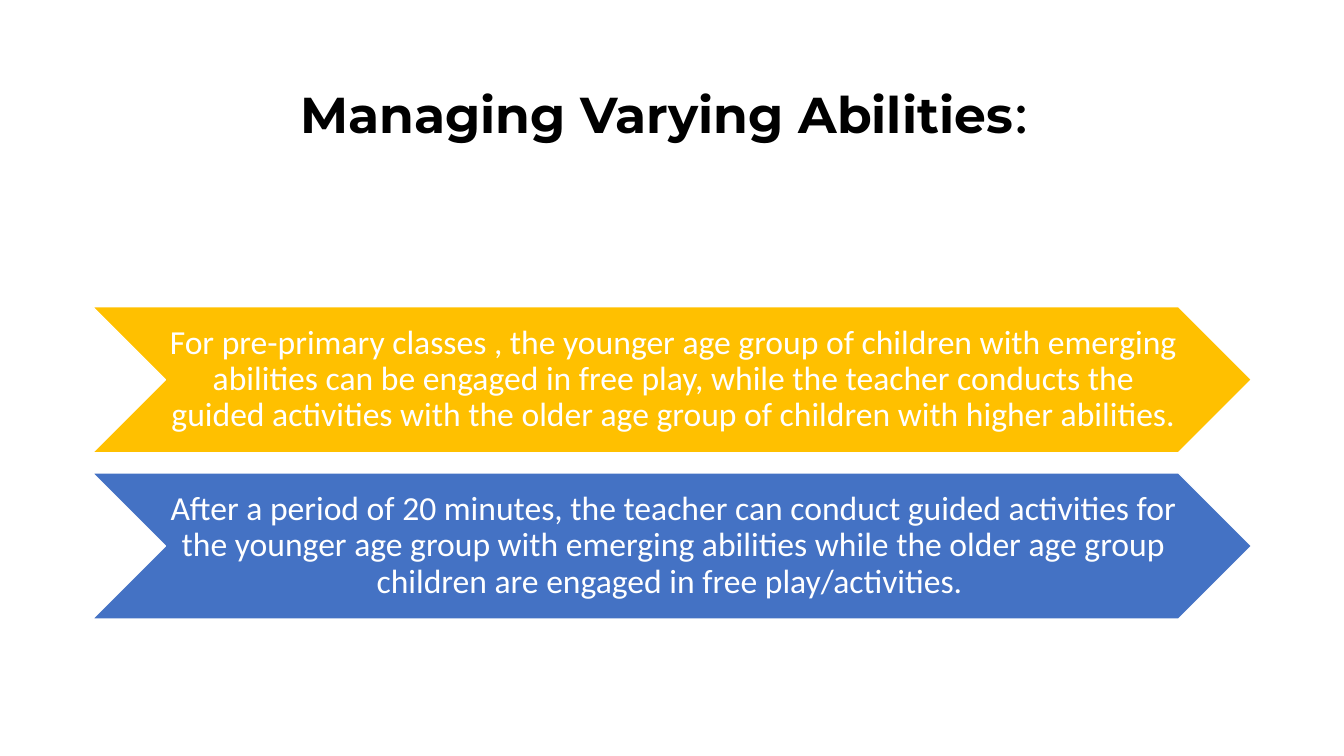
from pptx import Presentation
from pptx.dml.color import RGBColor
from pptx.enum.shapes import MSO_SHAPE
from pptx.enum.text import MSO_ANCHOR, PP_ALIGN
from pptx.util import Pt

CHEVRON = MSO_SHAPE.CHEVRON
CENTER = PP_ALIGN.CENTER
MIDDLE = MSO_ANCHOR.MIDDLE

COLORS = {"black": "000000", "white": "FFFFFF", "gold": "FFC000", "blue": "4472C4"}

TITLE = [
    ("Managing Varying Abilities", {"font": "Montserrat", "size": 36, "bold": True}),
    (": ", {"font": "Calibri", "size": 44}),
]
STEPS = [
    ("gold", "For pre-primary classes , the younger age group of children with emerging "
             "abilities can be engaged in free play, while the teacher conducts the guided "
             "activities with the older age group of children with higher abilities. "),
    ("blue", "After a period of 20 minutes, the teacher can conduct guided activities for the "
             "younger age group with emerging abilities while the older age group children "
             "are engaged in free play/activities. "),
]

LEFT, WIDTH = 66, 828
TITLE_TOP, TITLE_HEIGHT = 28.75, 104.4
STEP_TOP, STEP_HEIGHT, STEP_GAP = 219, 104.4, 14.4


def rgb(name):
    return RGBColor.from_string(COLORS[name])


def add_text(p, text, font="Calibri", size=24, color="black", bold=False):
    p.alignment = CENTER
    p.line_spacing = 0.9
    r = p.add_run()
    r.text = text
    r.font.name = font
    r.font.size = Pt(size)
    r.font.bold = bold
    r.font.color.rgb = rgb(color)


def add_step(s, top, fill, text):
    sp = s.shapes.add_shape(CHEVRON, Pt(LEFT), Pt(top), Pt(WIDTH), Pt(STEP_HEIGHT))
    sp.shadow.inherit = False
    sp.fill.solid()
    sp.fill.fore_color.rgb = rgb(fill)
    sp.line.color.rgb = rgb("white")
    sp.line.width = Pt(1)
    tf = sp.text_frame
    tf.word_wrap = True
    tf.vertical_anchor = MIDDLE
    tf.margin_left, tf.margin_right = Pt(2), Pt(0)
    tf.margin_top = tf.margin_bottom = Pt(1.5)
    add_text(tf.paragraphs[0], text, color="white")


def main():
    prs = Presentation()
    prs.slide_width, prs.slide_height = Pt(960), Pt(540)
    s = prs.slides.add_slide(prs.slide_layouts[5])

    title = s.shapes.title
    title.left, title.top = Pt(LEFT), Pt(TITLE_TOP)
    title.width, title.height = Pt(WIDTH), Pt(TITLE_HEIGHT)
    title.text_frame.vertical_anchor = MIDDLE
    for text, style in TITLE:
        add_text(title.text_frame.paragraphs[0], text, **style)

    for i, (fill, text) in enumerate(STEPS):
        add_step(s, STEP_TOP + i * (STEP_HEIGHT + STEP_GAP), fill, text)

    prs.save("out.pptx")


if __name__ == "__main__":
    main()
